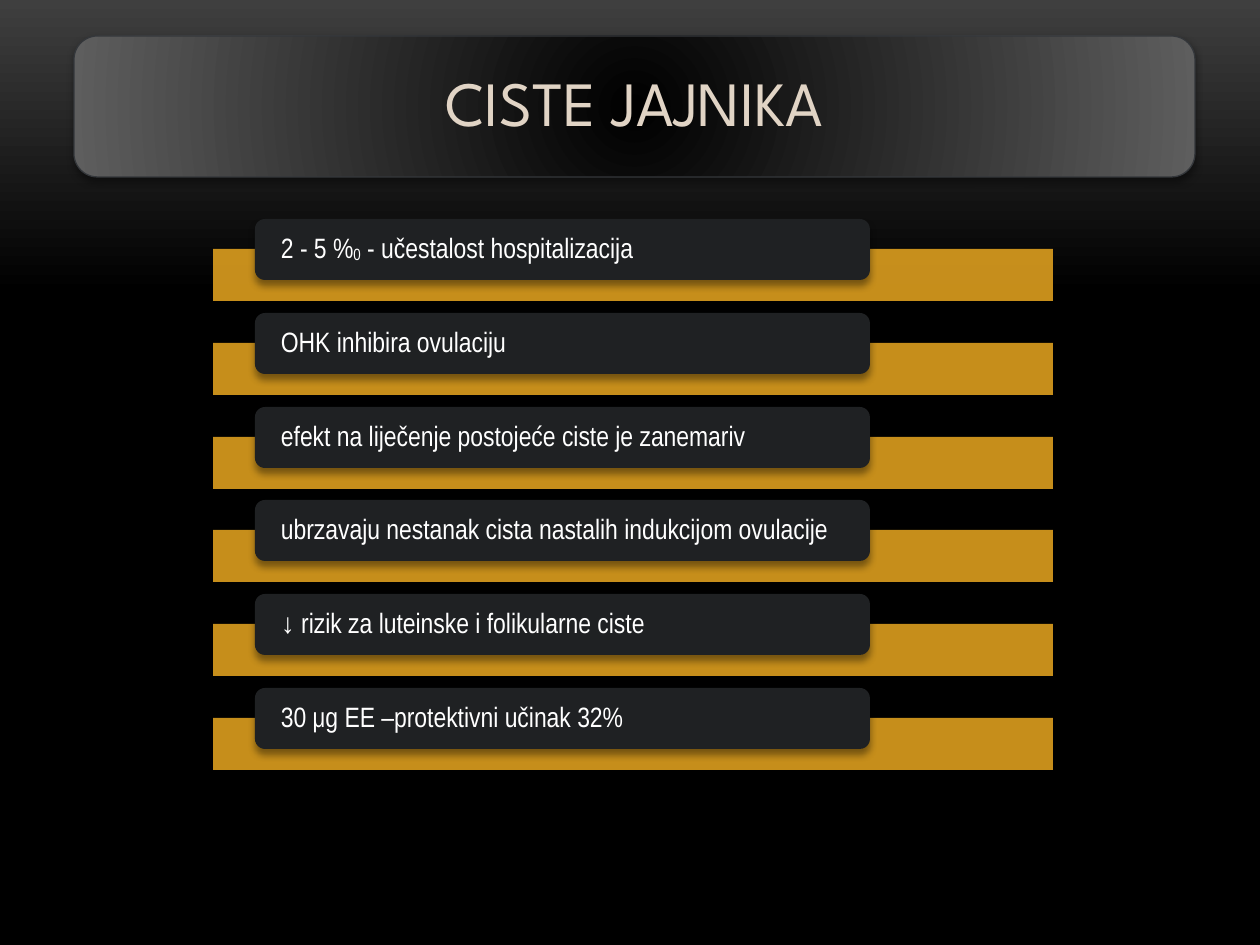
"""Build the slide on ovarian cysts: a title banner and six labelled bars."""
from lxml.etree import SubElement
from pptx import Presentation
from pptx.dml.color import RGBColor
from pptx.enum.shapes import MSO_SHAPE
from pptx.enum.text import MSO_ANCHOR, PP_ALIGN
from pptx.oxml.ns import qn
from pptx.util import Emu, Pt

PX = 914400 / 126
BLACK = RGBColor(0x00, 0x00, 0x00)
CHARCOAL = RGBColor(0x3F, 0x3F, 0x3F)
GREY = RGBColor(0x5E, 0x5E, 0x5E)
EDGE = RGBColor(0x34, 0x37, 0x3B)
SAND = RGBColor(0xE1, 0xD4, 0xC5)
GOLD = RGBColor(0xDC, 0x9E, 0x1F)
INK = RGBColor(0x1F, 0x21, 0x23)
WHITE = RGBColor(0xFF, 0xFF, 0xFF)
PITCH = 93.8
LABELS = [
    ["2 - 5 %", "0", " - učestalost hospitalizacija"],
    ["OHK inhibira ovulaciju"],
    ["efekt na liječenje postojeće ciste je zanemariv"],
    ["ubrzavaju nestanak cista nastalih indukcijom ovulacije"],
    ["↓ rizik za luteinske i folikularne ciste"],
    ["30 μg EE –protektivni učinak 32%"],
]


def add_box(s, kind, *box, shadow=0):
    sp = s.shapes.add_shape(kind, *(Emu(round(v * PX)) for v in box))
    sp.shadow.inherit = False
    sp.line.fill.background()
    if shadow:
        effects = sp._element.spPr.find(qn("a:effectLst"))
        outer = SubElement(effects, qn("a:outerShdw"), blurRad=str(Pt(4)),
                           dist=str(Pt(shadow)), dir="5400000", rotWithShape="0")
        color = SubElement(outer, qn("a:srgbClr"), val="000000")
        SubElement(color, qn("a:alpha"), val="40000")
    return sp


def write(sp, runs, font, size, color, align, inset_x, inset_y):
    tf = sp.text_frame
    tf.word_wrap = True
    tf.vertical_anchor = MSO_ANCHOR.MIDDLE
    tf.margin_left = tf.margin_right = Emu(round(inset_x * PX))
    tf.margin_top = tf.margin_bottom = Emu(round(inset_y * PX))
    p = tf.paragraphs[0]
    p.alignment = align
    p.line_spacing = 0.9
    p.font.name = font
    p.font.size = Pt(size)
    p.font.color.rgb = color
    for text in runs:
        r = p.add_run()
        r.text = text
        if text == "0":
            r.font._element.set("baseline", "-6000")


prs = Presentation()
prs.slide_width = Emu(round(1260 * PX))
prs.slide_height = Emu(round(945 * PX))
s = prs.slides.add_slide(prs.slide_layouts[6])

fill = s.background.fill
fill.gradient()
fill.gradient_angle = 270
for stop, color, position in zip(fill.gradient_stops, (CHARCOAL, BLACK), (0, 0.31)):
    stop.color.rgb = color
    stop.position = position

banner = add_box(s, MSO_SHAPE.ROUNDED_RECTANGLE, 74, 36, 1121, 141, shadow=2)
banner.line.color.rgb = EDGE
banner.line.width = Pt(0.75)
banner.fill.gradient()
for stop, color, position in zip(banner.fill.gradient_stops, (BLACK, GREY), (0, 1)):
    stop.color.rgb = color
    stop.position = position
grad = banner._element.spPr.find(qn("a:gradFill"))
grad.remove(grad.find(qn("a:lin")))
radial = SubElement(grad, qn("a:path"), path="circle")
SubElement(radial, qn("a:fillToRect"), {side: "100000" for side in "ltrb"})
write(banner, ["CISTE JAJNIKA"], "League Spartan", 36, SAND, PP_ALIGN.CENTER, 19, 19)

for i, runs in enumerate(LABELS):
    offset = round(i * PITCH)
    bar = add_box(s, MSO_SHAPE.RECTANGLE, 213, 249 + offset, 840, 52)
    bar.fill.solid()
    bar.fill.fore_color.rgb = GOLD
    rgb = bar._element.spPr.find(qn("a:solidFill")).find(qn("a:srgbClr"))
    SubElement(rgb, qn("a:alpha"), val="90000")

    label = add_box(s, MSO_SHAPE.ROUNDED_RECTANGLE, 255, 219 + offset, 615, 61, shadow=3.4)
    label.fill.solid()
    label.fill.fore_color.rgb = INK
    write(label, runs, "Arial Narrow", 16, WHITE, PP_ALIGN.LEFT, 23, 0)

prs.save("out.pptx")
